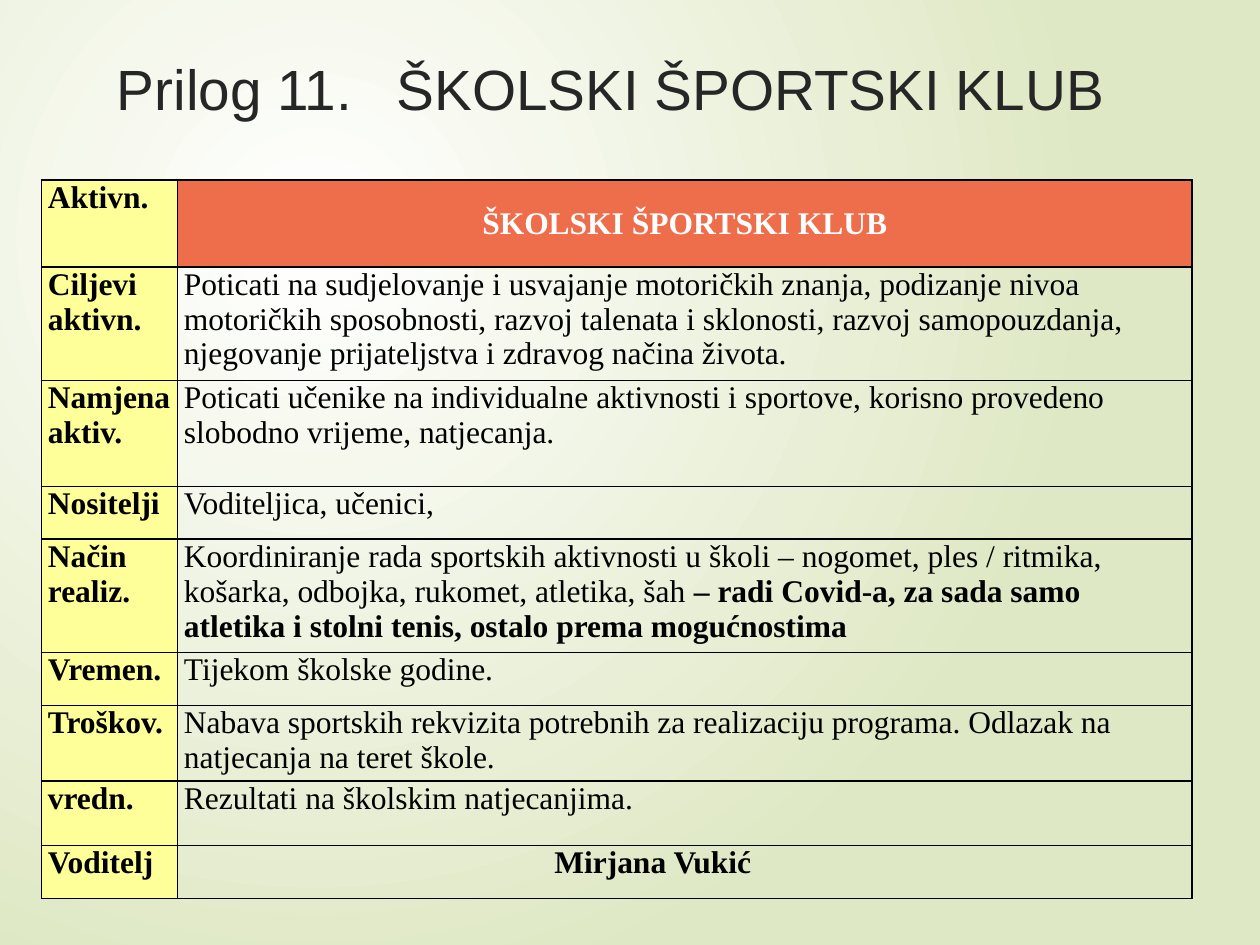
from dataclasses import dataclass

from pptx import Presentation
from pptx.dml.color import RGBColor
from pptx.enum.text import MSO_ANCHOR, PP_ALIGN
from pptx.oxml import parse_xml
from pptx.oxml.ns import nsdecls
from pptx.util import Inches, Pt

LEFT, CENTER = PP_ALIGN.LEFT, PP_ALIGN.CENTER
TOP, MIDDLE = MSO_ANCHOR.TOP, MSO_ANCHOR.MIDDLE


@dataclass(frozen=True)
class Theme:
    title_font: str = "Arial"
    table_font: str = "Times New Roman"
    title_size: float = 32.4
    table_size: float = 18
    border_width: float = 1
    title: str = "262626"
    text: str = "000000"
    border: str = "000000"
    heading: str = "FFFFFF"
    heading_fill: str = "EE6E4B"
    label_fill: str = "FFFF99"
    glow: str = "FFFFFF"
    backdrop: str = "DFE8C4"


THEME = Theme()
COLUMN_WIDTHS = (1.08, 8.05)
HEADING = "ŠKOLSKI ŠPORTSKI KLUB"

# Row height, label paragraphs, then (text, bold) spans of the description
ROWS = (
    (0.81, ["Ciljevi aktivn."], [(
        "Poticati na sudjelovanje i usvajanje motoričkih znanja, podizanje nivoa "
        "motoričkih sposobnosti, razvoj talenata i sklonosti, razvoj samopouzdanja, "
        "njegovanje prijateljstva i zdravog načina života.", False)]),
    (0.84, ["Namjena", "aktiv."], [(
        "Poticati učenike na individualne aktivnosti i sportove, korisno provedeno "
        "slobodno vrijeme, natjecanja.", False)]),
    (0.42, ["Nositelji"], [("Voditeljica, učenici,", False)]),
    (0.47, ["Način realiz."], [
        ("Koordiniranje rada sportskih aktivnosti u školi – nogomet, ples / ritmika, "
         "košarka, odbojka, rukomet, atletika, šah ", False),
        ("– radi Covid-a, za sada samo atletika i stolni tenis, "
         "ostalo prema mogućnostima", True)]),
    (0.42, ["Vremen."], [("Tijekom školske godine.", False)]),
    (0.43, ["Troškov."], [(
        "Nabava sportskih rekvizita potrebnih za realizaciju programa. Odlazak na "
        "natjecanja na teret škole.", False)]),
    (0.51, ["vredn."], [("Rezultati na školskim natjecanjima.", False)]),
    (0.42, ["Voditelj"], [("Mirjana Vukić", True)]),
)


def add_span(para, text, font, size, color, bold=False):
    span = para.add_run()
    span.text = text
    span.font.name = font
    span.font.size = Pt(size)
    span.font.bold = bold
    span.font.color.rgb = RGBColor.from_string(color)


def paint_background(page):
    """Fill the page with a circular gradient centred in its upper left quarter."""
    fill = page.background.fill
    fill.solid()
    solid = page.background._cSld.bg.bgPr[0]
    gradient = parse_xml(
        f'<a:gradFill {nsdecls("a")} rotWithShape="1"><a:gsLst>'
        f'<a:gs pos="0"><a:srgbClr val="{THEME.glow}"/></a:gs>'
        f'<a:gs pos="100000"><a:srgbClr val="{THEME.backdrop}"/></a:gs></a:gsLst>'
        '<a:path path="circle">'
        '<a:fillToRect l="50000" t="50000" r="100000" b="100000"/></a:path></a:gradFill>')
    solid.getparent().replace(solid, gradient)


def add_title(page):
    box = page.shapes.add_textbox(Inches(0.83), Inches(0.33), Inches(8.42), Inches(0.73))
    frame = box.text_frame
    frame.word_wrap = True
    frame.vertical_anchor = MIDDLE
    para = frame.paragraphs[0]
    para._p.get_or_add_pPr().append(parse_xml(
        f'<a:tabLst {nsdecls("a")}><a:tab pos="{Inches(2.22)}" algn="l"/></a:tabLst>'))
    add_span(para, f"Prilog 11.\t{HEADING}", THEME.title_font, THEME.title_size, THEME.title)


def draw_borders(cell):
    properties = cell._tc.get_or_add_tcPr()
    for index, side in enumerate(("lnL", "lnR", "lnT", "lnB")):
        properties.insert(index, parse_xml(
            f'<a:{side} {nsdecls("a")} w="{Pt(THEME.border_width)}"><a:solidFill>'
            f'<a:srgbClr val="{THEME.border}"/></a:solidFill></a:{side}>'))


def fill_cell(cell, paragraphs, fill=None, color=THEME.text, align=LEFT, anchor=TOP):
    """Write paragraphs, each a list of (text, bold) spans, into a bordered cell."""
    cell.margin_left = cell.margin_right = Inches(0.05)
    cell.margin_top = cell.margin_bottom = 0
    cell.vertical_anchor = anchor
    if fill:
        cell.fill.solid()
        cell.fill.fore_color.rgb = RGBColor.from_string(fill)
    else:
        cell.fill.background()
    draw_borders(cell)
    frame = cell.text_frame
    for index, spans in enumerate(paragraphs):
        para = frame.add_paragraph() if index else frame.paragraphs[0]
        para.alignment = align
        for text, bold in spans:
            add_span(para, text, THEME.table_font, THEME.table_size, color, bold)


def add_activity_table(page):
    height = Inches(5.69)
    holder = page.shapes.add_table(len(ROWS) + 1, len(COLUMN_WIDTHS),
                                   Inches(0.33), Inches(1.43), Inches(9.13), height)
    table = holder.table
    table.first_row = table.horz_banding = False
    for column, width in zip(table.columns, COLUMN_WIDTHS):
        column.width = Inches(width)

    table.rows[0].height = Inches(0.69)
    fill_cell(table.cell(0, 0), [[("Aktivn.", True)]], THEME.label_fill)
    fill_cell(table.cell(0, 1), [[(HEADING, True)]], THEME.heading_fill,
              THEME.heading, CENTER, MIDDLE)
    for index, (row_height, labels, spans) in enumerate(ROWS, start=1):
        table.rows[index].height = Inches(row_height)
        fill_cell(table.cell(index, 0), [[(label, True)] for label in labels],
                  THEME.label_fill)
        fill_cell(table.cell(index, 1), [spans])

    leader = table.cell(len(ROWS), 1).text_frame.paragraphs[0]
    leader._p.get_or_add_pPr().set("marL", str(Inches(2.94)))
    holder.height = height


def main():
    deck = Presentation()
    deck.slide_width, deck.slide_height = Inches(10), Inches(7.5)
    page = deck.slides.add_slide(deck.slide_layouts[6])
    paint_background(page)
    add_title(page)
    add_activity_table(page)
    deck.save("out.pptx")


if __name__ == "__main__":
    main()
